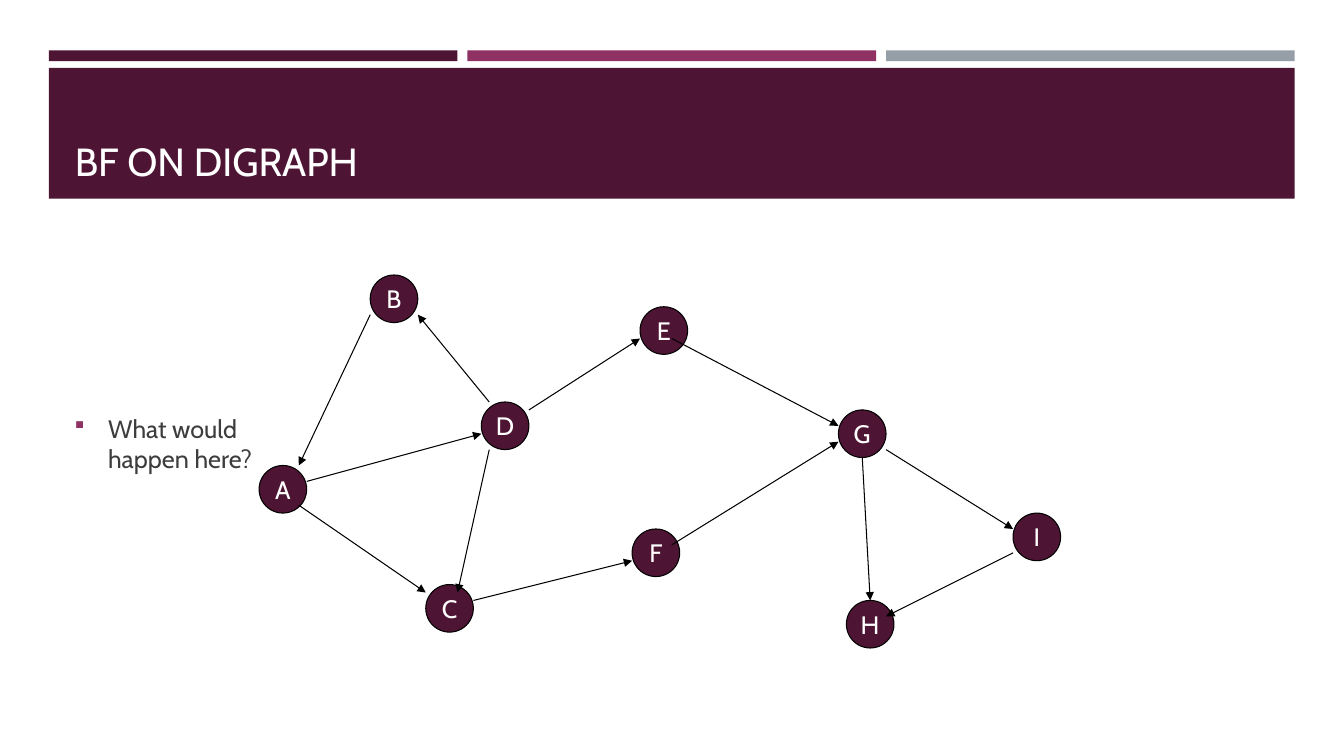
from lxml.etree import SubElement
from pptx import Presentation
from pptx.dml.color import RGBColor
from pptx.enum.shapes import MSO_CONNECTOR as Connector, MSO_SHAPE as Shape
from pptx.enum.text import MSO_ANCHOR as Anchor, MSO_AUTO_SIZE as AutoSize, PP_ALIGN as Align
from pptx.oxml.ns import qn
from pptx.util import Cm, Pt

FONT = "Cabin"
PLUM, MAGENTA, GREY = "4D1434", "903163", "969FA7"
WHITE, BLACK, TEXT = "FFFFFF", "000000", "3D3D3D"
DIAMETER = 1.2
NODES = {
    "B": (2.8, 0.2), "I": (19.0, 6.2), "A": (0, 5.0),
    "C": (4.2, 8.0), "D": (5.6, 3.4), "H": (14.8, 8.4),
    "G": (14.6, 3.6), "F": (9.4, 6.6), "E": (9.6, 1.0),
}
EDGES = [
    ("A", (6, 2), "D", (0, 4)),
    ("D", (1, 0), "B", (6, 5)),
    ("B", (0, 5), "A", (5, 0)),
    ("A", (5, 5), "C", (0, 1)),
    ("D", (1, 6), "C", (4, 1)),
    ("D", (6, 1), "E", (0, 4)),
    ("E", (4, 4), "G", (0, 2)),
    ("F", (5, 2), "G", (0, 4)),
    ("G", (6, 5), "I", (0, 2)),
    ("G", (3, 6), "H", (3, 0)),
    ("I", (0, 5), "H", (5, 2)),
    ("C", (6, 2), "F", (0, 4)),
]


def paint(color_owner, color):
    if hasattr(color_owner, "solid"):
        color_owner.solid()
        color_owner = color_owner.fore_color
    color_owner.rgb = RGBColor.from_string(color)


def add_run(paragraph, text, size, color):
    run = paragraph.add_run()
    run.text = text
    run.font.name = FONT
    run.font.size = Pt(size)
    paint(run.font.color, color)


def add_filled(slide, kind, left, top, width, height, color):
    shape = slide.shapes.add_shape(kind, Cm(left), Cm(top), Cm(width), Cm(height))
    shape.shadow.inherit = False
    paint(shape.fill, color)
    shape.line.fill.background()
    return shape


def place(placeholder, left, top, width, height, anchor):
    placeholder.element.getparent().append(placeholder.element)
    placeholder.left, placeholder.top = Cm(left), Cm(top)
    placeholder.width, placeholder.height = Cm(width), Cm(height)
    frame = placeholder.text_frame
    frame.auto_size = AutoSize.NONE
    frame.word_wrap = True
    frame.vertical_anchor = anchor
    paragraph = frame.paragraphs[0]
    paragraph.alignment = Align.LEFT
    return paragraph


def add_header(slide, left, top, width, height):
    gap = 0.25
    stripe = (width - 2 * gap) / 3
    for index, color in enumerate((PLUM, MAGENTA, GREY)):
        add_filled(slide, Shape.RECTANGLE, left + index * (stripe + gap), top, stripe, 0.27, color)
    add_filled(slide, Shape.RECTANGLE, left, top + 0.44, width, height - 0.44, PLUM)
    paragraph = place(slide.shapes.title, left + 0.4, top + 0.69, width - 0.8, 2.82, Anchor.BOTTOM)
    add_run(paragraph, "BF ON DIGRAPH", 28, WHITE)


def add_question(slide, left, top, width, height):
    paragraph = place(slide.placeholders[1], left, top, width, height, Anchor.MIDDLE)
    paragraph.space_before, paragraph.space_after = Pt(3.6), Pt(6)
    properties = paragraph._p.get_or_add_pPr()
    properties.set("marL", str(Cm(0.85)))
    properties.set("indent", str(-Cm(0.85)))
    bullet_color = SubElement(properties, qn("a:buClr"))
    SubElement(bullet_color, qn("a:srgbClr"), val=MAGENTA)
    SubElement(properties, qn("a:buSzPct"), val="92000")
    SubElement(properties, qn("a:buFont"), typeface="Wingdings", charset="2")
    SubElement(properties, qn("a:buChar"), char="§")
    add_run(paragraph, "What would happen here?", 18, TEXT)


def add_node(slide, left, top, name):
    node = add_filled(slide, Shape.OVAL, left, top, DIAMETER, DIAMETER, PLUM)
    paint(node.line.fill, BLACK)
    node.line.width = Pt(0.75)
    frame = node.text_frame
    frame.word_wrap = False
    frame.vertical_anchor = Anchor.MIDDLE
    paragraph = frame.paragraphs[0]
    paragraph.alignment = Align.CENTER
    add_run(paragraph, name, 18, WHITE)


def add_arrow(slide, start, end):
    arrow = slide.shapes.add_connector(Connector.STRAIGHT, *map(Cm, start + end))
    paint(arrow.line.fill, BLACK)
    arrow.line.width = Pt(0.75)
    SubElement(arrow.line._get_or_add_ln(), qn("a:tailEnd"), type="triangle")
    SubElement(arrow._element.spPr, qn("a:effectLst"))


def add_digraph(slide, left, top):
    def point(name, sixths):
        x, y = NODES[name]
        across, down = sixths
        return left + x + across * DIAMETER / 6, top + y + down * DIAMETER / 6

    for name in NODES:
        add_node(slide, *point(name, (0, 0)), name)
    for source, leaving, target, arriving in EDGES:
        add_arrow(slide, point(source, leaving), point(target, arriving))


def main():
    presentation = Presentation()
    presentation.slide_width, presentation.slide_height = Cm(33.87), Cm(19.05)
    slide = presentation.slides.add_slide(presentation.slide_layouts[1])
    paint(slide.background.fill, WHITE)
    add_header(slide, 1.23, 1.27, 31.4, 3.74)
    add_question(slide, 1.62, 6.07, 5.31, 10.21)
    add_digraph(slide, 6.53, 6.73)
    presentation.save("out.pptx")


if __name__ == "__main__":
    main()
